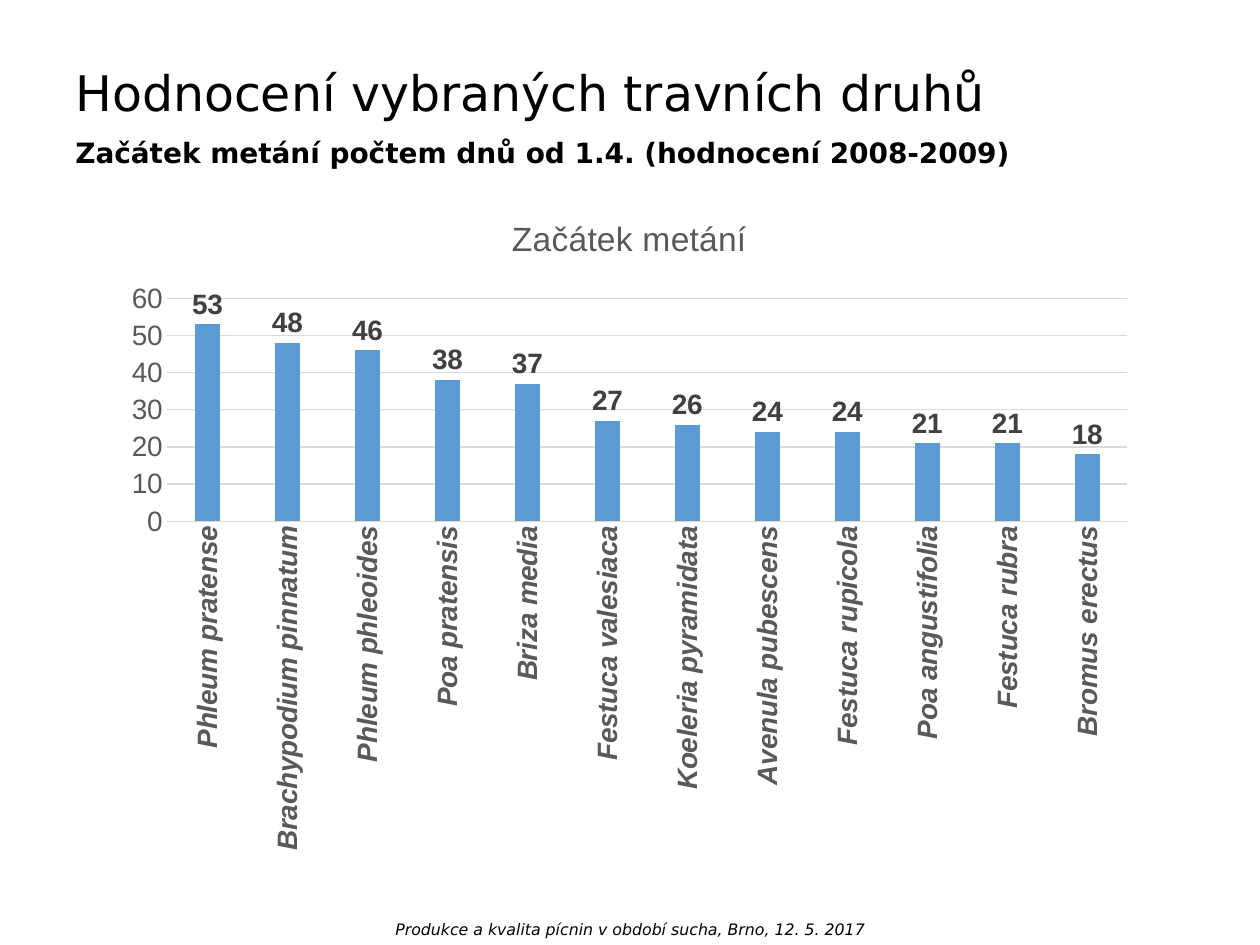
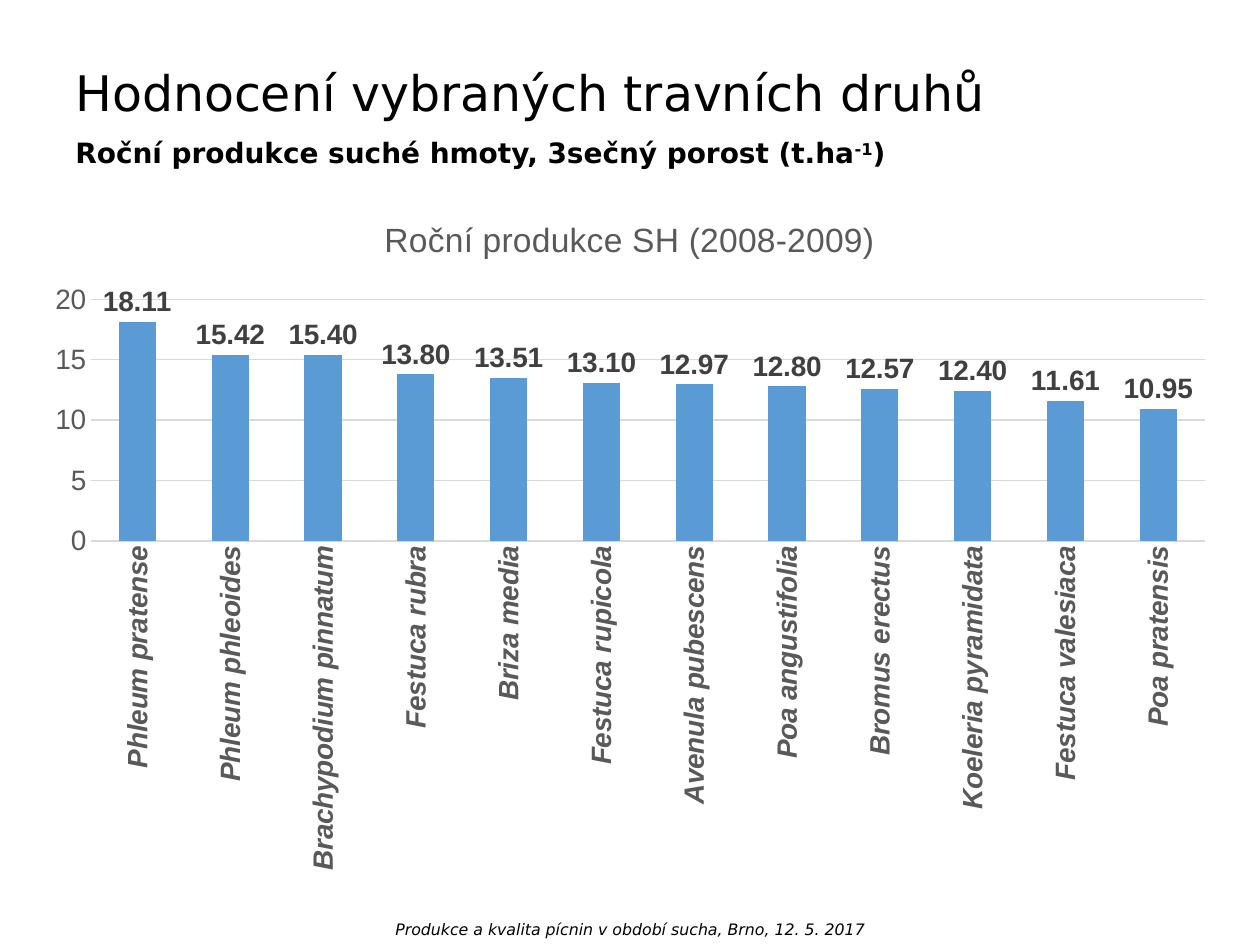
from pptx import Presentation
from pptx.chart.data import CategoryChartData
from pptx.dml.color import RGBColor
from pptx.enum.chart import XL_CHART_TYPE, XL_LABEL_POSITION, XL_TICK_MARK
from pptx.enum.text import MSO_ANCHOR, PP_ALIGN
from pptx.util import Pt

BLACK = RGBColor(0x00, 0x00, 0x00)
AXIS_GREY = RGBColor(0x59, 0x59, 0x59)
LABEL_GREY = RGBColor(0x40, 0x40, 0x40)
GRID_GREY = RGBColor(0xD9, 0xD9, 0xD9)
BAR_BLUE = RGBColor(0x5B, 0x9B, 0xD5)

TEXT_FONT = "DejaVu Sans"
CHART_FONT = "Arial"
HEADING = "Hodnocení vybraných travních druhů"
FOOTER = "Produkce a kvalita pícnin v období sucha, Brno, 12. 5. 2017"

HEADING_DAYS = {
    "Phleum pratense": 53, "Brachypodium pinnatum": 48, "Phleum phleoides": 46,
    "Poa pratensis": 38, "Briza media": 37, "Festuca valesiaca": 27,
    "Koeleria pyramidata": 26, "Avenula pubescens": 24, "Festuca rupicola": 24,
    "Poa angustifolia": 21, "Festuca rubra": 21, "Bromus erectus": 18,
}
DRY_MATTER = {
    "Phleum pratense": 18.11, "Phleum phleoides": 15.42,
    "Brachypodium pinnatum": 15.4, "Festuca rubra": 13.8, "Briza media": 13.51,
    "Festuca rupicola": 13.1, "Avenula pubescens": 12.97,
    "Poa angustifolia": 12.8, "Bromus erectus": 12.57,
    "Koeleria pyramidata": 12.4, "Festuca valesiaca": 11.61,
    "Poa pratensis": 10.95,
}


def style_font(font, name, size, color, bold=False, italic=False):
    font.name = name
    font.size = Pt(size)
    font.bold = bold
    font.italic = italic
    font.color.rgb = color


class GrassDeck:
    def __init__(self):
        self.deck = Presentation()
        self.deck.slide_width = Pt(720)
        self.deck.slide_height = Pt(540)
        self.page = None

    def add_page(self, subtitle):
        self.page = self.deck.slides.add_slide(self.deck.slide_layouts[6])
        self.add_heading(subtitle)
        self.add_footer()

    def add_box(self, left, top, width, height):
        box = self.page.shapes.add_textbox(Pt(left), Pt(top), Pt(width), Pt(height))
        box.text_frame.word_wrap = True
        box.text_frame.vertical_anchor = MSO_ANCHOR.TOP
        return box.text_frame

    def add_heading(self, subtitle):
        """Add title and subtitle; every second part of subtitle is superscript."""
        frame = self.add_box(36, 36, 581, 72.7)
        frame.text = HEADING
        title = frame.paragraphs[0]
        title.line_spacing = 0.9
        style_font(title.runs[0].font, TEXT_FONT, 28, BLACK)
        paragraph = frame.add_paragraph()
        paragraph.line_spacing = 0.9
        paragraph.space_before = Pt(10)
        for index, part in enumerate(subtitle):
            span = paragraph.add_run()
            span.text = part
            style_font(span.font, TEXT_FONT, 16, BLACK, bold=True)
            if index % 2:
                span.font._element.set("baseline", "30000")

    def add_footer(self):
        frame = self.add_box(180, 522, 360, 18)
        frame.text = FOOTER
        paragraph = frame.paragraphs[0]
        paragraph.alignment = PP_ALIGN.CENTER
        style_font(paragraph.runs[0].font, TEXT_FONT, 9, BLACK, italic=True)

    def add_column_chart(self, title, values, area, label_format, maximum, step,
                         gap, overlap=0, base_line=False):
        data = CategoryChartData()
        data.categories = list(values)
        data.add_series("Series 1", list(values.values()))
        chart = self.page.shapes.add_chart(
            XL_CHART_TYPE.COLUMN_CLUSTERED, *map(Pt, area), data).chart
        style_font(chart.font, CHART_FONT, 16, BLACK)
        chart.has_legend = False
        chart.has_title = True
        frame = chart.chart_title.text_frame
        frame.text = title
        style_font(frame.paragraphs[0].runs[0].font, CHART_FONT, 19.2, AXIS_GREY)
        chart.chart_title.include_in_layout = False

        plot = chart.plots[0]
        plot.gap_width = gap
        plot.overlap = overlap
        plot.vary_by_categories = False
        fill = plot.series[0].format.fill
        fill.solid()
        fill.fore_color.rgb = BAR_BLUE
        plot.has_data_labels = True
        labels = plot.data_labels
        labels.show_value = True
        labels.position = XL_LABEL_POSITION.OUTSIDE_END
        labels.number_format = label_format
        labels.number_format_is_linked = False
        style_font(labels.font, CHART_FONT, 16, LABEL_GREY, bold=True)

        self.style_axes(chart, base_line)
        chart.value_axis.minimum_scale = 0
        chart.value_axis.maximum_scale = maximum
        chart.value_axis.major_unit = step

    def style_axes(self, chart, base_line):
        species_axis, value_axis = chart.category_axis, chart.value_axis
        for axis in (species_axis, value_axis):
            axis.major_tick_mark = XL_TICK_MARK.NONE
            axis.minor_tick_mark = XL_TICK_MARK.NONE
            is_species = axis is species_axis
            style_font(axis.tick_labels.font, CHART_FONT, 16, AXIS_GREY,
                       bold=is_species, italic=is_species)
            axis.format.line.fill.background()
        species_axis._element.txPr.bodyPr.set("rot", "-5400000")
        value_axis.tick_labels.number_format = "0"
        value_axis.tick_labels.number_format_is_linked = False
        lines = [value_axis.major_gridlines.format.line]
        if base_line:
            lines.append(species_axis.format.line)
        for line in lines:
            line.color.rgb = GRID_GREY
            line.width = Pt(0.75)


def main():
    grasses = GrassDeck()
    grasses.add_page(["Začátek metání počtem dnů od 1.4. (hodnocení 2008-2009)"])
    grasses.add_column_chart("Začátek metání", HEADING_DAYS, (63.4, 108.7, 592.6, 385.2),
                             "0", 60, 10, gap=219, overlap=-27, base_line=True)
    grasses.add_page(["Roční produkce suché hmoty, 3sečný porost (t.ha", "-1", ")"])
    grasses.add_column_chart("Roční produkce SH (2008-2009)", DRY_MATTER,
                             (18, 108.7, 684, 396.7), "0.00", 20, 5, gap=150)
    grasses.deck.save("out.pptx")


if __name__ == "__main__":
    main()
